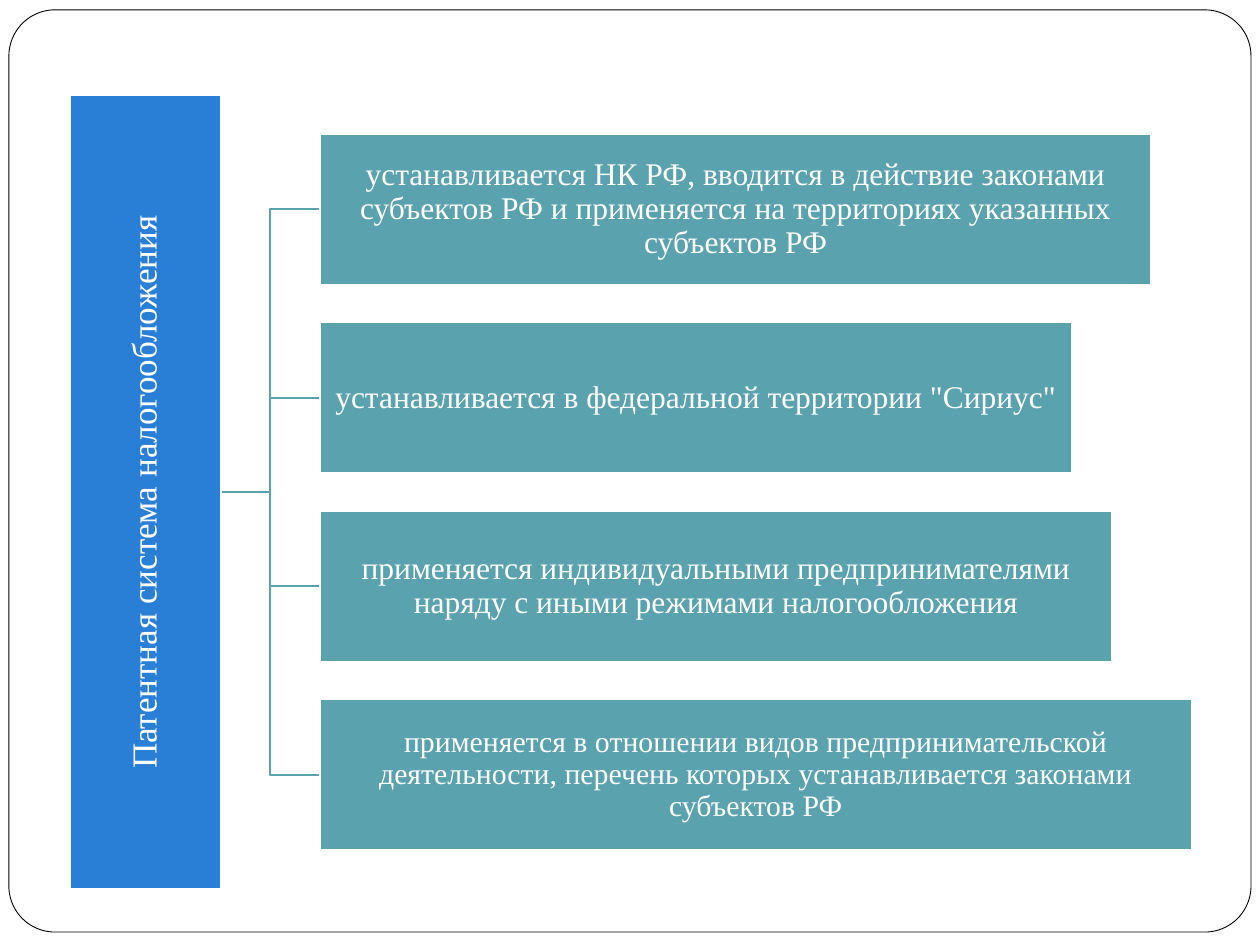
import pptx
import pptx.dml.color
import pptx.enum.shapes
import pptx.enum.text
import pptx.util

Cm = pptx.util.Cm
Pt = pptx.util.Pt
SHAPE = pptx.enum.shapes.MSO_SHAPE

BLUE, TEAL, WHITE, BLACK = "297FD5", "5AA2AE", "FFFFFF", "000000"
BOX_HEIGHT = 3.04
PITCH = 3.8
FIRST_CENTER = 4.22
ROOT_LENGTH = 16
ROOT_CENTER = 2.93
ROOT_RIGHT = ROOT_CENTER + BOX_HEIGHT / 2
BRANCH_LEFT = 6.45

# Text, box width in cm, font size
BRANCHES = [
    ("устанавливается НК РФ, вводится в действие законами субъектов РФ "
     "и применяется на территориях указанных субъектов РФ", 16.76, 18),
    ('устанавливается в федеральной территории "Сириус"', 15.16, 18),
    ("применяется индивидуальными предпринимателями наряду "
     "с иными режимами налогообложения", 15.97, 18),
    ("применяется в отношении видов предпринимательской деятельности, "
     "перечень которых устанавливается законами субъектов РФ", 17.57, 17),
]


def rgb(color):
    return pptx.dml.color.RGBColor.from_string(color)


def style(sp, fill, line, width):
    sp.shadow.inherit = False
    if fill:
        sp.fill.solid()
        sp.fill.fore_color.rgb = rgb(fill)
    else:
        sp.fill.background()
    sp.line.color.rgb = rgb(line)
    sp.line.width = Pt(width)


def add_frame(s):
    sp = s.shapes.add_shape(SHAPE.ROUNDED_RECTANGLE,
                            Cm(0.18), Cm(0.2), Cm(25.04), Cm(18.59))
    sp.adjustments[0] = 0.05
    style(sp, WHITE, BLACK, 0.5)


def add_box(s, text, left, center_y, width, fill, size):
    sp = s.shapes.add_shape(SHAPE.RECTANGLE, Cm(left), Cm(center_y - BOX_HEIGHT / 2),
                            Cm(width), Cm(BOX_HEIGHT))
    style(sp, fill, WHITE, 1)
    tf = sp.text_frame
    tf.word_wrap = True
    tf.vertical_anchor = pptx.enum.text.MSO_ANCHOR.MIDDLE
    tf.margin_left = tf.margin_right = tf.margin_top = tf.margin_bottom = Cm(0.03)
    tf.text = text
    p = tf.paragraphs[0]
    p.alignment = pptx.enum.text.PP_ALIGN.CENTER
    p.line_spacing = 0.9
    font = p.runs[0].font
    font.name = "Times New Roman"
    font.size = Pt(size)
    font.color.rgb = rgb(WHITE)
    return sp


def add_elbow(s, start_y, end_y):
    """Draw a bent line from the root box to a branch box."""
    middle = (ROOT_RIGHT + BRANCH_LEFT) / 2
    builder = s.shapes.build_freeform(Cm(ROOT_RIGHT), Cm(start_y))
    builder.add_line_segments([(Cm(middle), Cm(start_y)), (Cm(middle), Cm(end_y)),
                               (Cm(BRANCH_LEFT), Cm(end_y))], close=False)
    style(builder.convert_to_shape(), None, TEAL, 1)


def main():
    prs = pptx.Presentation()
    prs.slide_width, prs.slide_height = Cm(25.4), Cm(19.05)
    s = prs.slides.add_slide(prs.slide_layouts[6])
    add_frame(s)

    centers = [FIRST_CENTER + i * PITCH for i in range(len(BRANCHES))]
    root_y = (centers[0] + centers[-1]) / 2
    for center in reversed(centers):
        add_elbow(s, root_y, center)

    root = add_box(s, "Патентная система налогообложения",
                   ROOT_CENTER - ROOT_LENGTH / 2, root_y, ROOT_LENGTH, BLUE, 20)
    root.rotation = 270
    for (text, width, size), center in zip(BRANCHES, centers):
        add_box(s, text, BRANCH_LEFT, center, width, TEAL, size)

    prs.save("out.pptx")


if __name__ == "__main__":
    main()
